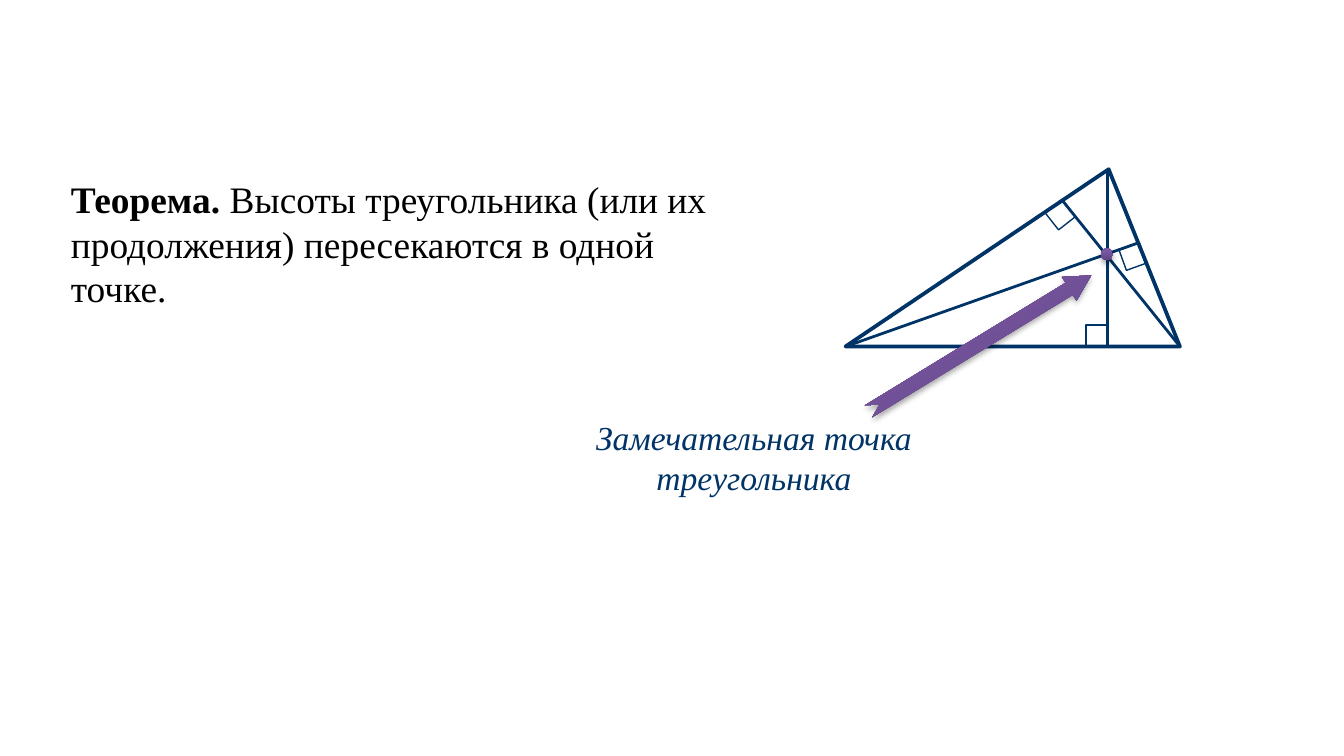
from copy import deepcopy
from dataclasses import dataclass

from lxml import etree
from pptx import Presentation
from pptx import util as u
from pptx.dml.color import RGBColor
from pptx.enum import shapes, text
from pptx.oxml.ns import qn

Kind = shapes.MSO_SHAPE
Align = text.PP_ALIGN


@dataclass(frozen=True)
class Theme:
    font: str = "Times New Roman"
    ink: str = "000000"
    navy: str = "003366"
    purple: tuple = ((0, "5F4480"), (0.8, "7B58A6"), (1, "7C57A8"))
    theorem_size: float = 20
    caption_size: float = 18
    thin: float = 0.75
    medium: float = 1.5
    thick: float = 2


def add_run(p, content, font, size, color, bold=False, italic=False):
    r = p.add_run()
    r.text = content
    r.font.name = font
    r.font.size = u.Pt(size)
    r.font.color.rgb = RGBColor.from_string(color)
    r.font.bold = bold
    r.font.italic = italic


def add_soft_shadow(sp):
    """Put a faint shadow just below the shape."""
    effects = sp._element.spPr.find(qn("a:effectLst"))
    shadow = etree.SubElement(effects, qn("a:outerShdw"), blurRad=str(u.Pt(3.1)),
                              dist=str(u.Pt(1.8)), dir="5400000", rotWithShape="0")
    color = etree.SubElement(shadow, qn("a:srgbClr"), val="000000")
    etree.SubElement(color, qn("a:alpha"), val="35000")


class Painter:
    def __init__(self, slide, theme):
        self.slide, self.theme = slide, theme

    def text_box(self, left, top, width, height, runs, align=Align.LEFT, **style):
        """Add one paragraph; runs are (text, format) pairs sharing a style."""
        box = self.slide.shapes.add_textbox(*map(u.Cm, (left, top, width, height)))
        tf = box.text_frame
        tf.word_wrap = True
        tf.auto_size = text.MSO_AUTO_SIZE.SHAPE_TO_FIT_TEXT
        p = tf.paragraphs[0]
        p.alignment = align
        for content, extra in runs:
            add_run(p, content, self.theme.font, **style, **extra)

    def line(self, start, end):
        cx = self.slide.shapes.add_connector(
            shapes.MSO_CONNECTOR.STRAIGHT, *map(u.Cm, (*start, *end)))
        cx.line.color.rgb = RGBColor.from_string(self.theme.navy)
        cx.line.width = u.Pt(self.theme.medium)
        etree.SubElement(cx._element.spPr, qn("a:effectLst"))

    def shape(self, kind, center, width, height, rotation=0):
        x, y = center
        sp = self.slide.shapes.add_shape(
            kind, *map(u.Cm, (x - width / 2, y - height / 2, width, height)))
        sp.rotation = rotation
        sp.shadow.inherit = False
        return sp

    def outline(self, kind, center, width, height, weight, rotation=0):
        sp = self.shape(kind, center, width, height, rotation)
        sp.fill.background()
        sp.line.color.rgb = RGBColor.from_string(self.theme.navy)
        sp.line.width = u.Pt(weight)
        return sp

    def accent(self, kind, center, width, height, rotation=0):
        """Add a purple gradient shape with a soft shadow."""
        sp = self.shape(kind, center, width, height, rotation)
        sp.line.fill.background()
        sp.fill.gradient()
        sp.fill.gradient_angle = 90
        stop_list = sp._element.spPr.find(".//" + qn("a:gsLst"))
        stop_list.append(deepcopy(stop_list[-1]))
        for stop, (position, color) in zip(sp.fill.gradient_stops, self.theme.purple):
            stop.position = position
            stop.color.rgb = RGBColor.from_string(color)
        add_soft_shadow(sp)
        return sp


def main():
    prs = Presentation()
    prs.slide_width, prs.slide_height = u.Cm(25.4), u.Cm(14.29)
    theme = Theme()
    painter = Painter(prs.slides.add_slide(prs.slide_layouts[6]), theme)

    painter.text_box(10.49, 7.75, 7.52, 1.8,
                     [("Замечательная точка треугольника", {"italic": True})],
                     align=Align.CENTER, size=theme.caption_size, color=theme.navy)
    painter.text_box(1.09, 3.2, 12.6, 2.82,
                     [("Теорема. ", {"bold": True}),
                      ("Высоты треугольника (или их продолжения) "
                       "пересекаются в одной точке.", {})],
                     size=theme.theorem_size, color=theme.ink)

    left, right, top, base = 15.98, 22.3, 3.2, 6.55
    apex_x = 20.93
    altitudes = (((right, base), (20.07, 3.78)),
                 ((apex_x, top), (apex_x, base)),
                 ((left, base), (21.49, 4.6)))
    for vertex, foot in altitudes:
        painter.line(vertex, foot)

    right_angles = (((20.04, 4.06), 51.9), ((20.73, 6.35), 0), ((21.41, 4.85), 70.1))
    for center, rotation in right_angles:
        painter.outline(Kind.RECTANGLE, center, 0.41, 0.41, theme.thin, rotation)

    triangle = painter.outline(Kind.ISOSCELES_TRIANGLE,
                               ((left + right) / 2, (top + base) / 2),
                               right - left, base - top, theme.thick)
    triangle.adjustments[0] = 0.787

    painter.accent(Kind.OVAL, (20.92, 4.81), 0.23, 0.23)
    arrow = painter.accent(Kind.NOTCHED_RIGHT_ARROW, (18.52, 6.49), 4.93, 0.53, 328.6)
    arrow.adjustments[0] = 0.5
    arrow.adjustments[1] = 0.92

    prs.save("out.pptx")


if __name__ == "__main__":
    main()
